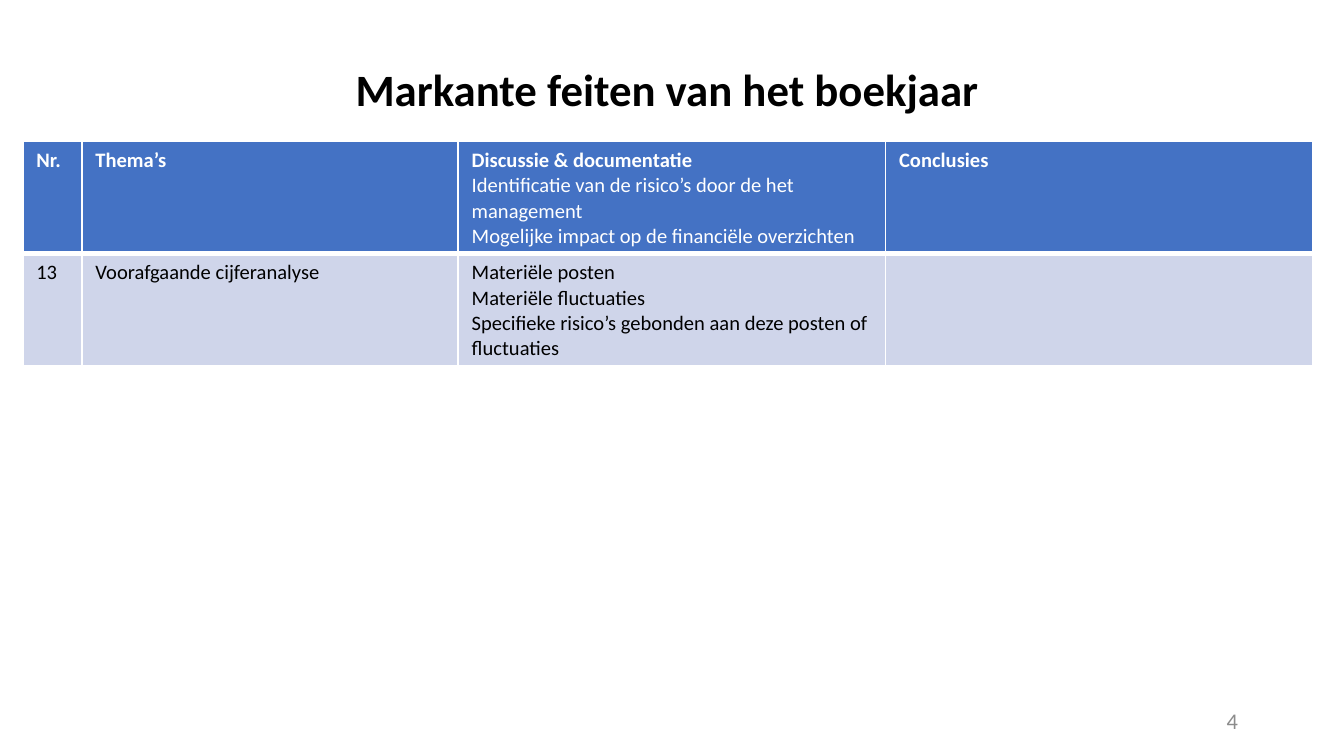
import pptx
import pptx.dml.color
import pptx.enum.text
import pptx.oxml
import pptx.oxml.ns
import pptx.util
from pptx.util import Inches

COLORS = {
    "text": "000000",
    "page": "8C8C8C",
    "white": "FFFFFF",
    "header": "4472C4",
    "band": "CFD5EA",
}
ALIGN = pptx.enum.text.PP_ALIGN
ANCHOR = pptx.enum.text.MSO_ANCHOR


def rgb(name):
    return pptx.dml.color.RGBColor.from_string(COLORS[name])


class SlideBuilder:
    font = "Calibri"
    table_size = 11

    def __init__(self, slide):
        self.slide = slide

    def style(self, paragraph, size, color, bold=False):
        font = paragraph.font
        font.name = self.font
        font.size = pptx.util.Pt(size)
        font.bold = bold
        font.color.rgb = rgb(color)

    def text(self, wording, box, size, color, align, bold=False, line_spacing=None):
        frame = self.slide.shapes.add_textbox(*map(Inches, box)).text_frame
        frame.word_wrap = True
        frame.vertical_anchor = ANCHOR.MIDDLE
        paragraph = frame.paragraphs[0]
        paragraph.text = wording
        paragraph.alignment = align
        paragraph.line_spacing = line_spacing
        self.style(paragraph, size, color, bold)

    def borders(self, cell, **widths):
        """Draw white cell edges; widths are points keyed by L, R, T and B."""
        properties = cell._tc.get_or_add_tcPr()
        for index, (side, width) in enumerate(widths.items()):
            properties.insert(index, pptx.oxml.parse_xml(
                f'<a:ln{side} {pptx.oxml.ns.nsdecls("a")} w="{pptx.util.Pt(width)}">'
                f'<a:solidFill><a:srgbClr val="{COLORS["white"]}"/></a:solidFill>'
                f'</a:ln{side}>'))

    def table(self, rows, left, top, column_widths, row_heights):
        """Build a table whose cells are lists of lines; the first row is the header."""
        table = self.slide.shapes.add_table(
            len(rows), len(column_widths), Inches(left), Inches(top),
            Inches(sum(column_widths)), Inches(sum(row_heights))).table
        for column, width in zip(table.columns, column_widths):
            column.width = Inches(width)
        for table_row, height in zip(table.rows, row_heights):
            table_row.height = Inches(height)
        for row_index, row in enumerate(rows):
            is_header = row_index == 0
            for column_index, lines in enumerate(row):
                cell = table.cell(row_index, column_index)
                self.borders(cell, L=1, R=1, T=1 if is_header else 3,
                             B=3 if is_header else 1)
                cell.fill.solid()
                cell.fill.fore_color.rgb = rgb("header" if is_header else "band")
                cell.text = "\n".join(lines)
                for line_index, paragraph in enumerate(cell.text_frame.paragraphs):
                    self.style(paragraph, self.table_size,
                               "white" if is_header else "text",
                               bold=is_header and line_index == 0)


def main():
    deck = pptx.Presentation()
    deck.slide_width = Inches(10)
    deck.slide_height = deck.slide_width * 9 // 16
    builder = SlideBuilder(deck.slides.add_slide(deck.slide_layouts[6]))

    builder.text("4", (7.06, 5.21, 2.25, 0.3), 12, "page", ALIGN.RIGHT)
    themes = [
        [
            ["Nr."],
            ["Thema’s"],
            ["Discussie & documentatie",
             "Identificatie van de risico’s door de het management",
             "Mogelijke impact op de financiële overzichten"],
            ["Conclusies"],
        ],
        [
            ["13"],
            ["Voorafgaande cijferanalyse"],
            ["Materiële posten",
             "Materiële fluctuaties",
             "Specifieke risico’s gebonden aan deze posten of fluctuaties"],
            [],
        ],
    ]
    builder.table(themes, 0.17, 1.05, (0.44, 2.8, 3.18, 3.18), (0.57, 0.51))
    builder.text("Markante feiten van het boekjaar ", (0.69, 0.14, 8.62, 1.09),
                 24, "text", ALIGN.CENTER, bold=True, line_spacing=0.9)
    deck.save("out.pptx")


if __name__ == "__main__":
    main()
